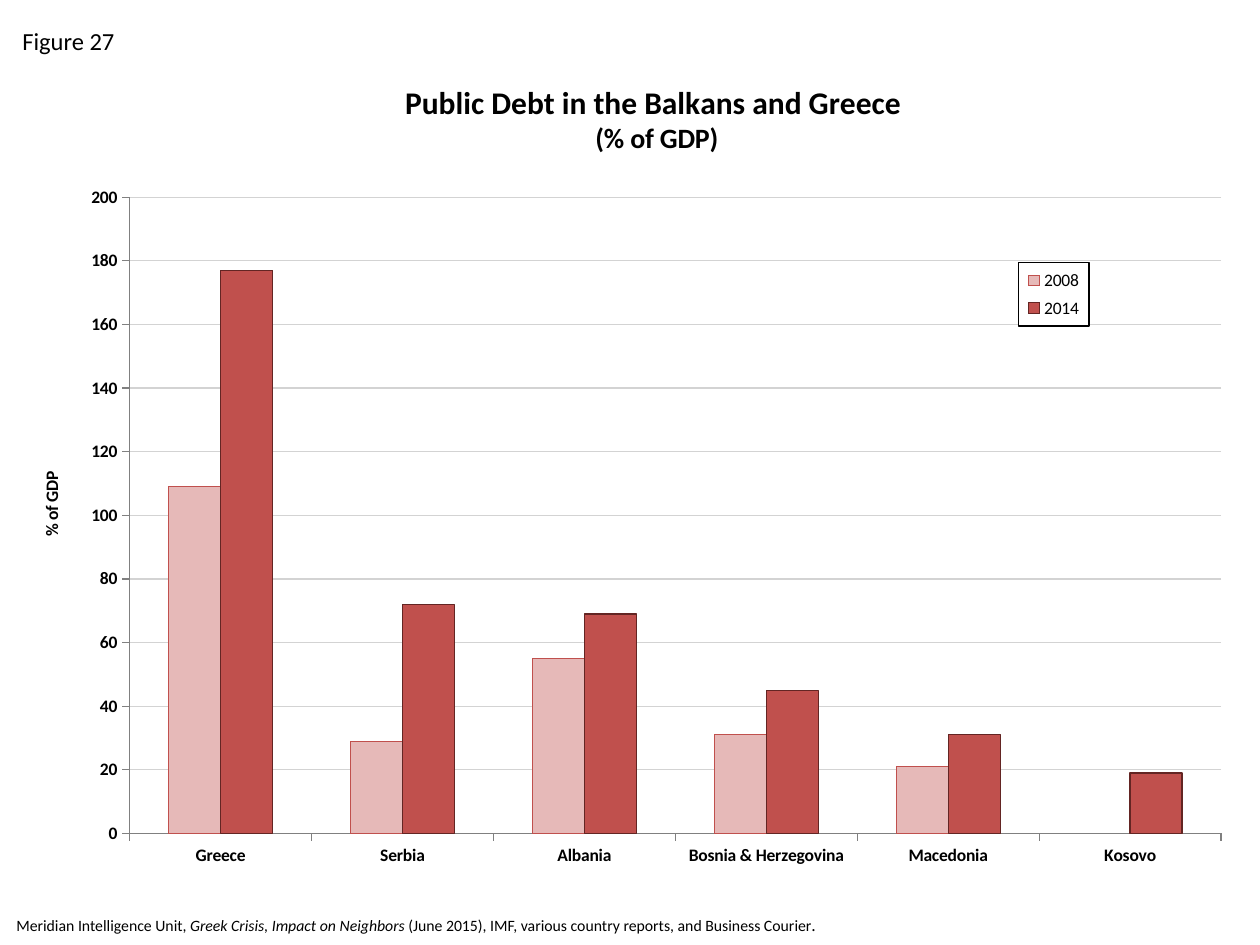
import dataclasses

import pptx
import pptx.chart.data
import pptx.dml.color
import pptx.enum.chart
import pptx.oxml
import pptx.oxml.ns
import pptx.util

Cm = pptx.util.Cm
Pt = pptx.util.Pt
RGBColor = pptx.dml.color.RGBColor
qn = pptx.oxml.ns.qn


@dataclasses.dataclass(frozen=True)
class Theme:
    font: str = "Calibri"
    ink: str = "000000"
    axis: str = "808080"
    grid: str = "D3D3D3"
    title: int = 18
    subtitle: int = 16
    label: int = 14
    chart: int = 10
    source: int = 9


theme = Theme()


def style(font, size, bold=False, italic=False):
    font.name = theme.font
    font.size = Pt(size)
    font.bold = bold
    font.italic = italic
    font.color.rgb = RGBColor.from_string(theme.ink)


def place(element, **fractions):
    layout = element.find(qn("c:layout"))
    if layout is None:
        layout = pptx.oxml.parse_xml(f'<c:layout {pptx.oxml.ns.nsdecls("c")}/>')
        element.insert(0, layout)
    manual = layout.makeelement(qn("c:manualLayout"), {})
    layout.append(manual)
    settings = {"xMode": "edge", "yMode": "edge", **fractions}
    if "w" in fractions:
        settings = {"layoutTarget": "inner", **settings}
    if element.tag == qn("c:legend"):
        settings.pop("layoutTarget")
    for name, value in settings.items():
        manual.append(manual.makeelement(qn(f"c:{name}"), {"val": str(value)}))


presentation = pptx.Presentation()
presentation.slide_width = Cm(25.4)
presentation.slide_height = Cm(19.05)
slide = presentation.slides.add_slide(presentation.slide_layouts[6])

captions = [
    ((0.08, 18.31, 25.4, 0.69), [
        ("Meridian Intelligence Unit, ", theme.source, False),
        ("Greek Crisis, Impact on Neighbors ", theme.source, True),
        ("(June 2015), IMF, various country reports, and Business Courier", theme.source, False),
        (".", theme.chart, False),
    ]),
    ((0.2, 0.41, 3.38, 0.86), [("Figure 27", theme.label, False)]),
]
for box, runs in captions:
    text_box = slide.shapes.add_textbox(*map(Cm, box))
    text_box.text_frame.word_wrap = True
    paragraph = text_box.text_frame.paragraphs[0]
    for text, size, italic in runs:
        run = paragraph.add_run()
        run.text = text
        style(run.font, size, italic=italic)

debt = pptx.chart.data.CategoryChartData()
debt.categories = ["Greece", "Serbia", "Albania", "Bosnia & Herzegovina", "Macedonia", "Kosovo"]
debt.add_series("2008", [109, 29, 55, 31, 21, None])
debt.add_series("2014", [177, 72, 69, 45, 31, 19])
chart = slide.shapes.add_chart(
    pptx.enum.chart.XL_CHART_TYPE.COLUMN_CLUSTERED,
    Cm(0.25), Cm(1.27), Cm(24.89), Cm(16.51), debt,
).chart
style(chart.font, theme.chart)
place(chart._chartSpace.chart.plotArea, x=0.095, y=0.164, w=0.884, h=0.777)

plot = chart.plots[0]
plot.gap_width = 150
plot.overlap = 0
plot.vary_by_categories = False
for series, (fill, line) in zip(plot.series, [("E6B9B8", "C0504D"), ("C0504D", "632523")]):
    series.format.fill.solid()
    series.format.fill.fore_color.rgb = RGBColor.from_string(fill)
    series.format.line.color.rgb = RGBColor.from_string(line)
    series.format.line.width = Pt(0.75)

title_frame = chart.chart_title.text_frame
title_frame.text = "Public Debt in the Balkans and Greece \n(% of GDP)"
for paragraph, size in zip(title_frame.paragraphs, [theme.title, theme.subtitle]):
    style(paragraph.runs[0].font, size, bold=True)
place(chart.chart_title._element, x=0.315, y=0.018)

for axis in (chart.category_axis, chart.value_axis):
    axis.major_tick_mark = pptx.enum.chart.XL_TICK_MARK.OUTSIDE
    axis.format.line.color.rgb = RGBColor.from_string(theme.axis)
    axis.format.line.width = Pt(0.75)
    style(axis.tick_labels.font, theme.chart, bold=True)

value_axis = chart.value_axis
value_axis.minimum_scale = 0
value_axis.maximum_scale = 200
value_axis.major_unit = 20
value_axis.major_gridlines.format.line.color.rgb = RGBColor.from_string(theme.grid)
value_axis.major_gridlines.format.line.width = Pt(0.75)
value_axis.axis_title.text_frame.text = "% of GDP"
style(value_axis.axis_title.text_frame.paragraphs[0].runs[0].font, theme.chart, bold=True)
place(value_axis.axis_title._element, x=0.02, y=0.495)

chart.has_legend = True
legend = chart.legend
legend.position = pptx.enum.chart.XL_LEGEND_POSITION.RIGHT
legend.include_in_layout = True
style(legend.font, theme.chart)
place(legend._element, x=0.815, y=0.244, w=0.057, h=0.077)
legend._element.find(qn("c:overlay")).addnext(pptx.oxml.parse_xml(
    f'<c:spPr {pptx.oxml.ns.nsdecls("c", "a")}>'
    '<a:solidFill><a:srgbClr val="FFFFFF"/></a:solidFill>'
    f'<a:ln w="9525"><a:solidFill><a:srgbClr val="{theme.ink}"/></a:solidFill></a:ln>'
    '</c:spPr>'
))

presentation.save("out.pptx")
